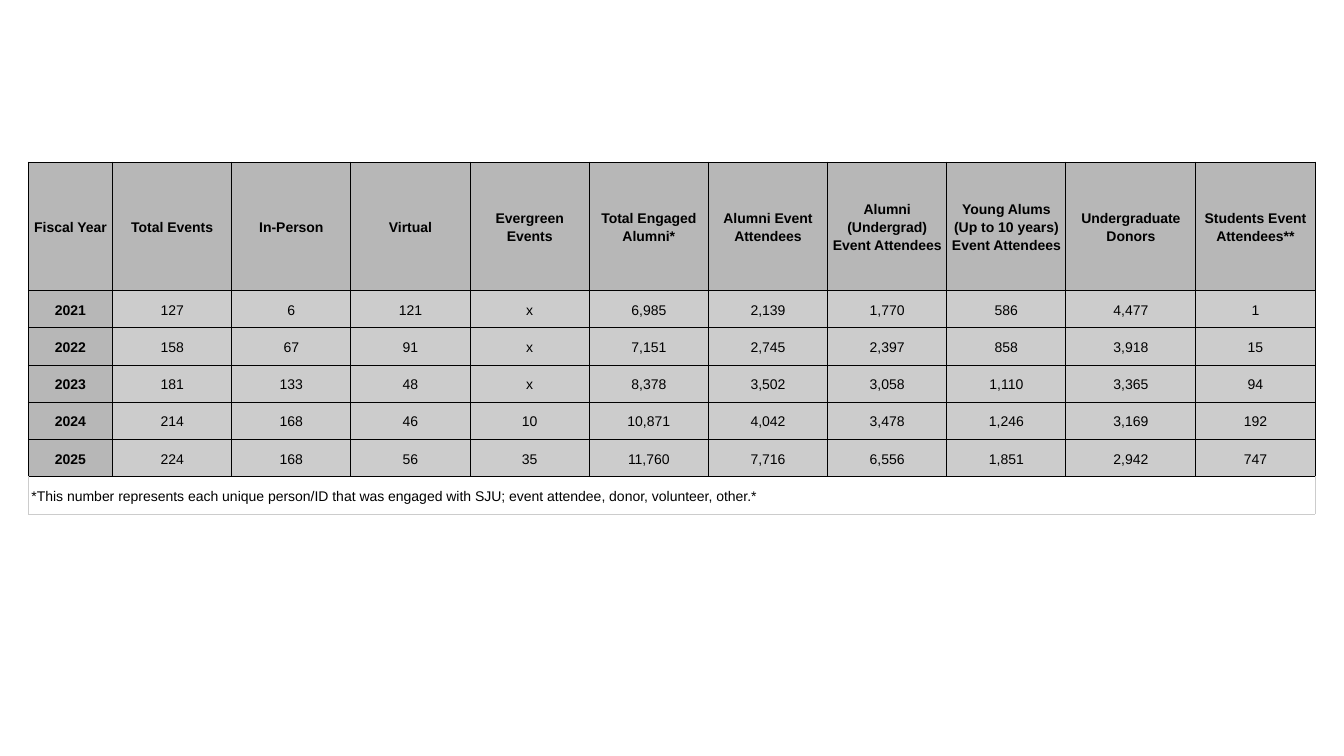
"""Build the slide with the table of alumni events and engagement by fiscal year."""
from dataclasses import dataclass
from typing import Optional

from lxml.etree import SubElement
from pptx import Presentation
from pptx.dml.color import RGBColor
from pptx.enum.text import MSO_ANCHOR, PP_ALIGN
from pptx.oxml.ns import qn
from pptx.table import Table, _Cell
from pptx.util import Pt

BLACK = RGBColor(0x00, 0x00, 0x00)
HEADING_GREY = RGBColor(0xB7, 0xB7, 0xB7)
VALUE_GREY = RGBColor(0xCC, 0xCC, 0xCC)

LEFT, TOP = 20.2, 115.8
YEAR_WIDTH, MEASURE_WIDTH, DONORS_WIDTH = 60.2, 85.15, 92.8
HEADING_HEIGHT, YEAR_HEIGHT = 91.8, 26.6


@dataclass(frozen=True)
class CellStyle:
    fill: Optional[RGBColor]
    bold: bool
    align: PP_ALIGN
    side_line: RGBColor = BLACK


HEADING = CellStyle(HEADING_GREY, True, PP_ALIGN.CENTER)
VALUE = CellStyle(VALUE_GREY, False, PP_ALIGN.CENTER)
NOTE = CellStyle(None, False, PP_ALIGN.LEFT, VALUE_GREY)

MEASURES = [
    "Fiscal Year", "Total Events", "In-Person", "Virtual", "Evergreen Events",
    "Total Engaged Alumni*", "Alumni Event Attendees",
    "Alumni (Undergrad) Event Attendees",
    "Young Alums (Up to 10 years) Event Attendees",
    "Undergraduate Donors", "Students Event Attendees**",
]
YEARS = [
    ["2021", "127", "6", "121", "x", "6,985", "2,139", "1,770", "586", "4,477", "1"],
    ["2022", "158", "67", "91", "x", "7,151", "2,745", "2,397", "858", "3,918", "15"],
    ["2023", "181", "133", "48", "x", "8,378", "3,502", "3,058", "1,110", "3,365", "94"],
    ["2024", "214", "168", "46", "10", "10,871", "4,042", "3,478", "1,246", "3,169", "192"],
    ["2025", "224", "168", "56", "35", "11,760", "7,716", "6,556", "1,851", "2,942", "747"],
]
FOOTNOTE = (
    "*This number represents each unique person/ID that was engaged with SJU; "
    "event attendee, donor, volunteer, other.*"
)


def draw_borders(cell: _Cell, style: CellStyle) -> None:
    """Line all four sides of a cell; the top is always black."""
    properties = cell._tc.get_or_add_tcPr()
    for side in ("lnL", "lnR", "lnT", "lnB"):
        color = BLACK if side == "lnT" else style.side_line
        line = SubElement(properties, qn(f"a:{side}"), w=str(Pt(0.75)))
        fill = SubElement(line, qn("a:solidFill"))
        SubElement(fill, qn("a:srgbClr"), val=str(color))


def style_cell(cell: _Cell, style: CellStyle) -> None:
    """Give a cell its borders, fill, margins and anchor."""
    draw_borders(cell, style)
    if style.fill is None:
        cell.fill.background()
    else:
        cell.fill.solid()
        cell.fill.fore_color.rgb = style.fill
    cell.margin_left = cell.margin_right = Pt(2.25)
    cell.margin_top = cell.margin_bottom = Pt(1.5)
    cell.vertical_anchor = MSO_ANCHOR.MIDDLE


def write_cell(cell: _Cell, text: str, style: CellStyle) -> None:
    """Write and format the text of a cell."""
    cell.text_frame.text = text
    paragraph = cell.text_frame.paragraphs[0]
    paragraph.alignment = style.align
    paragraph.line_spacing = 1.15
    font = paragraph.runs[0].font
    font.name, font.size, font.bold = "Arial", Pt(10), style.bold
    font.color.rgb = BLACK


def fill_years(table: Table) -> None:
    """Fill the heading row and one row for each fiscal year."""
    for row, texts in enumerate([MEASURES, *YEARS]):
        for column, text in enumerate(texts):
            style = HEADING if row == 0 or column == 0 else VALUE
            style_cell(table.cell(row, column), style)
            write_cell(table.cell(row, column), text, style)


def fill_footnote(table: Table) -> None:
    """Merge the last row and write the footnote in it."""
    last_row = len(table.rows) - 1
    footnote = table.cell(last_row, 0)
    footnote.merge(table.cell(last_row, len(table.columns) - 1))
    for cell in table.rows[last_row].cells:
        style_cell(cell, NOTE)
    write_cell(footnote, FOOTNOTE, NOTE)


def main() -> None:
    """Create and save the presentation."""
    presentation = Presentation()
    presentation.slide_width, presentation.slide_height = Pt(960), Pt(540)
    slide = presentation.slides.add_slide(presentation.slide_layouts[6])
    widths = [YEAR_WIDTH, *[MEASURE_WIDTH] * 8, DONORS_WIDTH, MEASURE_WIDTH]
    heights = [HEADING_HEIGHT, *[YEAR_HEIGHT] * (len(YEARS) + 1)]
    engagement = slide.shapes.add_table(
        len(heights), len(widths),
        Pt(LEFT), Pt(TOP), Pt(sum(widths)), Pt(sum(heights)),
    ).table
    engagement.first_row = engagement.horz_banding = False
    for column, width in zip(engagement.columns, widths):
        column.width = Pt(width)
    for row, height in zip(engagement.rows, heights):
        row.height = Pt(height)
    fill_years(engagement)
    fill_footnote(engagement)
    presentation.save("out.pptx")


if __name__ == "__main__":
    main()
